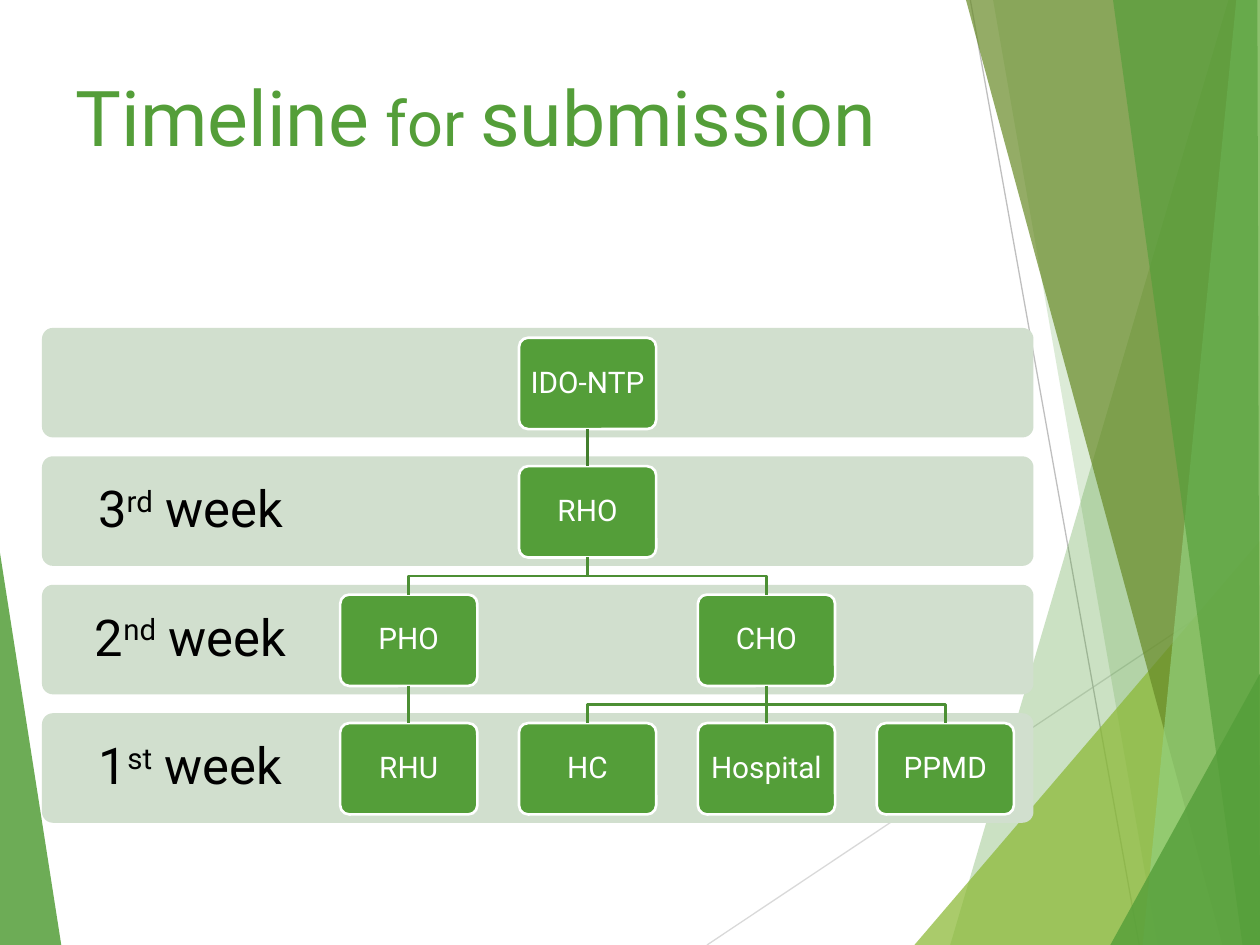
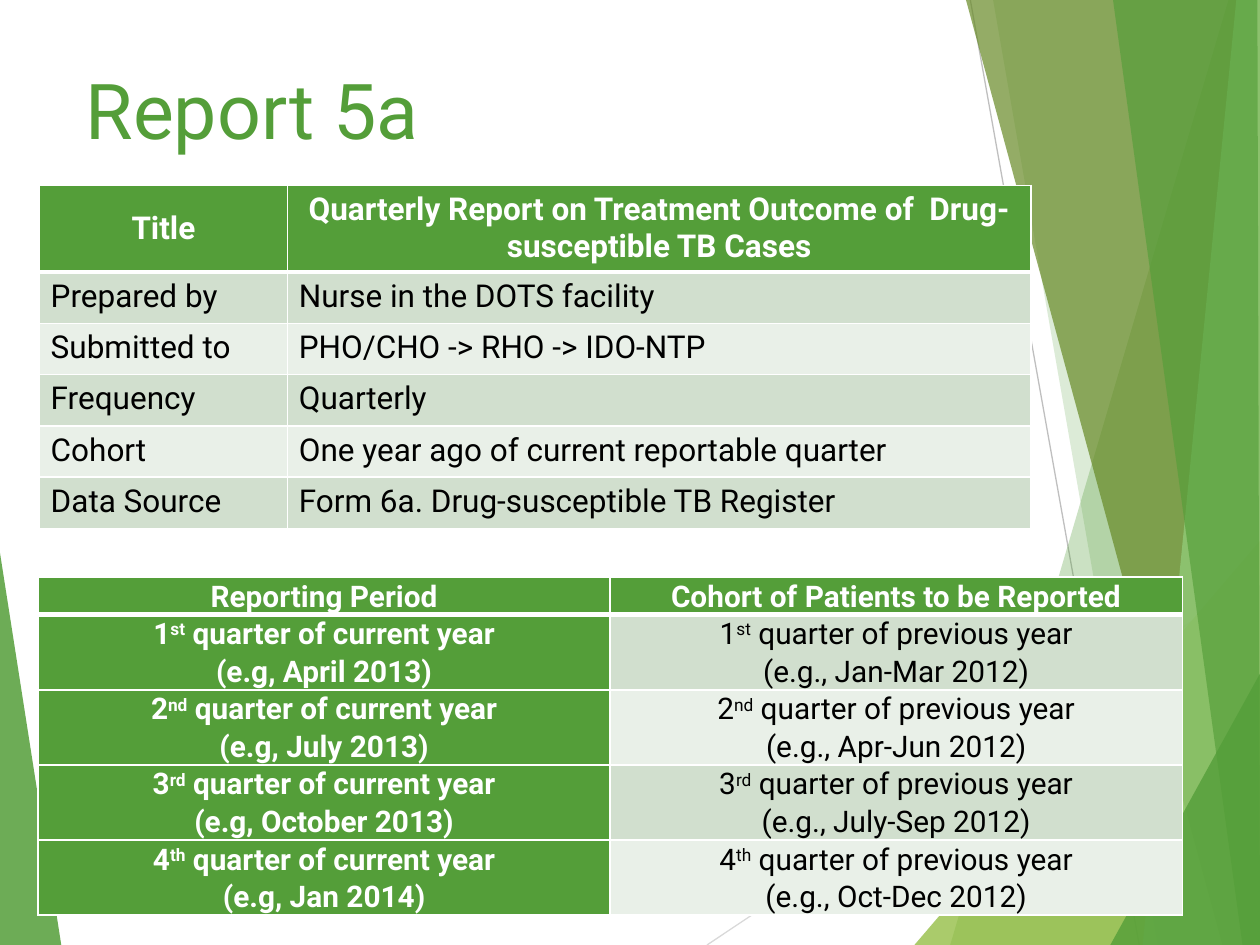
from dataclasses import dataclass

from lxml.etree import SubElement
from pptx import Presentation
from pptx.dml.color import RGBColor
from pptx.enum.shapes import MSO_CONNECTOR as Connector, MSO_SHAPE as Preset
from pptx.enum.text import MSO_ANCHOR as Anchor, MSO_AUTO_SIZE as AutoSize, PP_ALIGN as Align
from pptx.oxml.ns import qn
from pptx.util import Pt

WIDTH, HEIGHT = 720, 540


@dataclass(frozen=True)
class Theme:
    font: str = "Roboto"
    green: str = "549E39"
    lime: str = "8AB833"
    olive: str = "678A26"
    mint: str = "93D07D"
    band: str = "D1DFCE"
    pale: str = "E9F0E8"
    link: str = "4C8F34"
    top_link: str = "437F2E"
    hairline: str = "D9D9D9"
    hairline_dark: str = "BFBFBF"
    white: str = "FFFFFF"
    black: str = "000000"
    title_size: int = 44
    small_title_size: int = 36
    week_size: int = 29
    table_size: int = 18
    node_size: int = 17


THEME = Theme()

# Facets of the backdrop, back to front: colour, opacity in percent, corners
FACETS = [
    (THEME.green, 30, [(702, 0), (543, 540), (720, 540), (720, 0)]),
    (THEME.green, 20, [(567.5, 0), (661.5, 540), (720, 540), (720, 0)]),
    (THEME.lime, 72, [(522.5, 540), (720, 309), (720, 540)]),
    (THEME.olive, 70, [(552, 0), (698.5, 540), (720, 540), (720, 0)]),
    (THEME.mint, 70, [(706.5, 0), (653, 540), (720, 540), (720, 0)]),
    (THEME.green, 65, [(636, 0), (710, 540), (720, 540), (718.5, 0)]),
    (THEME.green, 80, [(634.5, 540), (720, 385), (720, 540)]),
]


def write(frame, text, *, size, color, bold=False, align=Align.LEFT,
          spacing=None, marked_size=None):
    """Parts between carets take marked_size, or are raised if it is not given."""
    for number, line in enumerate(text.split("\n")):
        paragraph = frame.add_paragraph() if number else frame.paragraphs[0]
        paragraph.alignment = align
        if spacing:
            paragraph.line_spacing = spacing
        for part, words in enumerate(line.split("^")):
            marked = part % 2 == 1
            run = paragraph.add_run()
            run.text = words
            run.font.name = THEME.font
            run.font.size = Pt(marked_size if marked and marked_size else size)
            run.font.bold = bold
            run.font.color.rgb = RGBColor.from_string(color)
            if marked and not marked_size:
                run.font._element.set("baseline", "30000")


def set_area(area, side, top, anchor):
    """Set the insets and anchor of a text frame or a table cell."""
    area.margin_left = area.margin_right = Pt(side)
    area.margin_top = area.margin_bottom = Pt(top)
    area.vertical_anchor = anchor


def set_borders(cell, **widths):
    properties = cell._tc.get_or_add_tcPr()
    for place, edge in enumerate(("lnL", "lnR", "lnT", "lnB")):
        line = properties.makeelement(qn(f"a:{edge}"), {"w": str(Pt(widths.get(edge, 1)))})
        fill = SubElement(line, qn("a:solidFill"))
        SubElement(fill, qn("a:srgbClr"), val=THEME.white)
        properties.insert(place, line)


class Deck:
    def __init__(self, theme):
        self.theme = theme
        self.presentation = Presentation()
        self.presentation.slide_width = Pt(WIDTH)
        self.presentation.slide_height = Pt(HEIGHT)
        self.slide = None

    def start(self, title, left, top):
        self.slide = self.presentation.slides.add_slide(self.presentation.slide_layouts[5])
        self.backdrop()
        heading = self.slide.shapes.title
        heading.left, heading.top, heading.width, heading.height = map(Pt, (left, top, 566.6, 59))
        frame = heading.text_frame
        frame.word_wrap = True
        frame.auto_size = AutoSize.NONE
        set_area(frame, 7.2, 3.6, Anchor.TOP)
        write(frame, title, size=self.theme.title_size, color=self.theme.green,
              marked_size=self.theme.small_title_size)

    def backdrop(self):
        self.facet(self.theme.green, 85, [(0, 316), (35, 540), (0, 540)])
        self.line((404, 540), (720, 329), self.theme.hairline, 0.75)
        self.line((554.5, 0), (651, 540), self.theme.hairline_dark, 0.75)
        for facet in FACETS:
            self.facet(*facet)

    def outline(self, points, close):
        start, *rest = [(Pt(x), Pt(y)) for x, y in points]
        builder = self.slide.shapes.build_freeform(*start)
        builder.add_line_segments(rest, close=close)
        shape = builder.convert_to_shape()
        shape.shadow.inherit = False
        return shape

    def facet(self, color, opacity, corners):
        shape = self.outline(corners, close=True)
        self.paint(shape, color)
        tint = shape.element.spPr.find(f".//{qn('a:srgbClr')}")
        SubElement(tint, qn("a:alpha"), val=str(opacity * 1000))

    def paint(self, shape, fill, edge=None):
        shape.fill.solid()
        shape.fill.fore_color.rgb = RGBColor.from_string(fill)
        if edge:
            self.stroke(shape, edge, 1.5)
        else:
            shape.line.fill.background()

    def stroke(self, shape, color, width):
        shape.line.color.rgb = RGBColor.from_string(color)
        shape.line.width = Pt(width)

    def line(self, start, end, color, width):
        line = self.slide.shapes.add_connector(Connector.STRAIGHT, *map(Pt, (*start, *end)))
        self.stroke(line, color, width)
        SubElement(line.element.spPr, qn("a:effectLst"))
        return line

    def bent_line(self, points, color):
        shape = self.outline(points, close=False)
        shape.fill.background()
        self.stroke(shape, color, 1.5)

    def rounded(self, left, top, width, height, fill, edge=None):
        shape = self.slide.shapes.add_shape(
            Preset.ROUNDED_RECTANGLE, *map(Pt, (left, top, width, height)))
        shape.adjustments[0] = 0.1
        shape.shadow.inherit = False
        self.paint(shape, fill, edge)
        return shape

    def label(self, text, left, top, width, height):
        frame = self.slide.shapes.add_textbox(*map(Pt, (left, top, width, height))).text_frame
        frame.word_wrap = True
        set_area(frame, 16.5, 16.5, Anchor.MIDDLE)
        write(frame, text, size=self.theme.week_size, color=self.theme.black,
              align=Align.CENTER, spacing=0.9)

    def node(self, text, left, top, width, height):
        shape = self.rounded(left, top, width, height, self.theme.green, self.theme.white)
        shape.text_frame.word_wrap = True
        set_area(shape.text_frame, 3, 3, Anchor.MIDDLE)
        write(shape.text_frame, text, size=self.theme.node_size, color=self.theme.white,
              align=Align.CENTER, spacing=0.9)
        return shape

    def table(self, rows, left, top, widths, heights, *, size, insets,
              centered=False, head_column=False, spacing=None):
        grid = self.slide.shapes.add_table(
            len(rows), len(widths), *map(Pt, (left, top, sum(widths), sum(heights)))).table
        for column, width in zip(grid.columns, widths):
            column.width = Pt(width)
        for r, (texts, height) in enumerate(zip(rows, heights)):
            grid.rows[r].height = Pt(height)
            for c, text in enumerate(texts):
                cell = grid.cell(r, c)
                head = r == 0 or (head_column and c == 0)
                stripe = self.theme.band if r % 2 else self.theme.pale
                cell.fill.solid()
                cell.fill.fore_color.rgb = RGBColor.from_string(
                    self.theme.green if head else stripe)
                set_borders(cell, lnT=3 if r == 1 else 1, lnB=3 if r == 0 else 1)
                set_area(cell, *insets, Anchor.MIDDLE if r == c == 0 else Anchor.TOP)
                write(cell.text_frame, text, size=size, bold=head, spacing=spacing,
                      color=self.theme.white if head else self.theme.black,
                      align=Align.CENTER if centered or r == 0 else Align.LEFT)


def timeline_slide(deck):
    deck.start("Timeline^ for ^submission", 36, 36)

    # Week bands
    band_left, band_top, band_height, row_step = 24, 187.4, 62.6, 73.4
    weeks = ["", "3^rd^ week", "2^nd^ week", "1^st^ week"]
    for row, week in enumerate(weeks):
        top = band_top + row * row_step
        deck.rounded(band_left, top, 566.6, band_height, deck.theme.band)
        if week:
            deck.label(week, band_left, top, 170, band_height)

    # Offices, each at a column and row
    node_left, node_width, node_height, column_step = 194.4, 78.4, 52.2, 102.2
    node_top = band_top + 5.6
    places = {
        "IDO-NTP": (1, 0), "RHO": (1, 1), "PHO": (0, 2), "CHO": (2, 2),
        "RHU": (0, 3), "HC": (1, 3), "Hospital": (2, 3), "PPMD": (3, 3),
    }
    offices = {
        name: deck.node(name, node_left + column * column_step, node_top + row * row_step,
                        node_width, node_height)
        for name, (column, row) in places.items()
    }

    # Reporting links from the upper office to the lower one
    links = [("IDO-NTP", "RHO"), ("RHO", "PHO"), ("RHO", "CHO"), ("PHO", "RHU"),
             ("CHO", "HC"), ("CHO", "Hospital"), ("CHO", "PPMD")]
    for upper, lower in links:
        (from_column, from_row), (to_column, to_row) = places[upper], places[lower]
        from_x, to_x = (node_left + node_width / 2 + column * column_step
                        for column in (from_column, to_column))
        from_y = node_top + from_row * row_step + node_height
        to_y = node_top + to_row * row_step
        color = deck.theme.link if from_row else deck.theme.top_link
        if from_column == to_column:
            link = deck.line((from_x, from_y), (to_x, to_y), color, 1.5)
            link.begin_connect(offices[upper], 2)
            link.end_connect(offices[lower], 0)
        else:
            bend = (from_y + to_y) / 2
            deck.bent_line([(from_x, from_y), (from_x, bend), (to_x, bend), (to_x, to_y)], color)


def report_slide(deck):
    deck.start("Report 5a", 41.8, 32.4)

    # Report profile
    profile = [
        ("Title", "Quarterly Report on Treatment Outcome of  Drug-susceptible TB Cases"),
        ("Prepared by", "Nurse in the DOTS facility"),
        ("Submitted to", "PHO/CHO -> RHO -> IDO-NTP"),
        ("Frequency", "Quarterly"),
        ("Cohort", "One year ago of current reportable quarter"),
        ("Data Source", "Form 6a. Drug-susceptible TB Register"),
    ]
    deck.table(profile, 22.5, 106, [141.8, 424.8], [49] + [29.3] * 5,
               size=deck.theme.table_size, insets=(6.5, 3.6))

    # Reporting periods and their cohorts
    quarters = [
        ("1^st^", "April 2013", "Jan-Mar 2012"),
        ("2^nd^", "July 2013", "Apr-Jun 2012"),
        ("3^rd^", "October 2013", "July-Sep 2012"),
        ("4^th^", "Jan 2014", "Oct-Dec 2012"),
    ]
    periods = [("Reporting Period", "Cohort of Patients to be Reported")] + [
        (f"{quarter} quarter of current year\n(e.g, {period})",
         f"{quarter} quarter of previous year\n(e.g., {cohort})")
        for quarter, period, cohort in quarters
    ]
    deck.table(periods, 21.8, 329.8, [326.9] * 2, [21.4] + [42.9] * 4,
               size=deck.theme.node_size, insets=(5, 0), centered=True,
               head_column=True, spacing=1.07)


def main():
    deck = Deck(THEME)
    timeline_slide(deck)
    report_slide(deck)
    deck.presentation.save("out.pptx")


if __name__ == "__main__":
    main()
